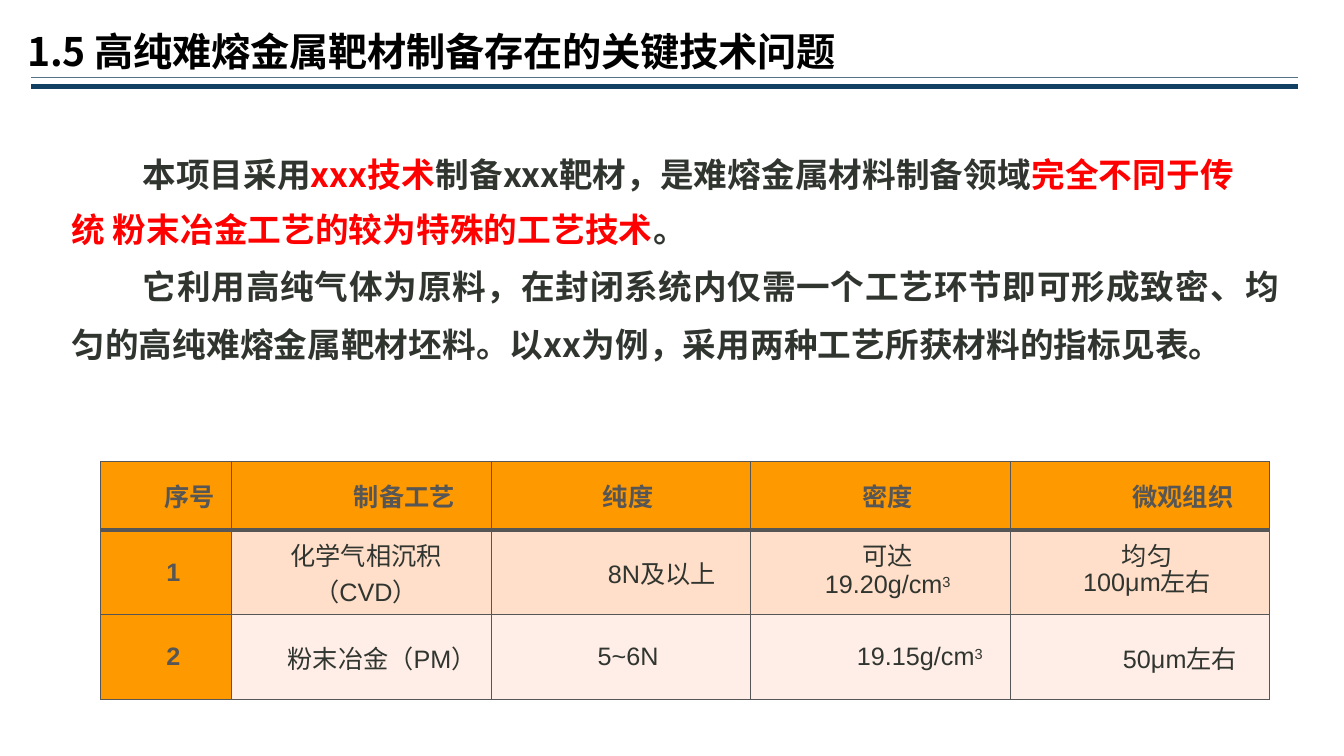
from lxml.etree import SubElement
from pptx import Presentation
from pptx.dml.color import RGBColor
from pptx.enum.shapes import MSO_CONNECTOR as Conn
from pptx.enum.text import MSO_ANCHOR as Anchor, MSO_AUTO_SIZE as Auto, PP_ALIGN as Align
from pptx.oxml.ns import qn
from pptx.util import Cm, Pt

HAN, LATIN = "Noto Sans CJK SC", "Arial"
INK, GREY, RED, ORANGE = "30352F", "565656", "FF0000", "FF9900"

TITLE = "1.5 高纯难熔金属靶材制备存在的关键技术问题"
RULES = [(1.96, "537285", 1), (2.18, "124062", 3)]  # y, colour, width

# line spacing, right margin, runs of (text, colour, letter spacing)
BODY = [
    (1.36, 0.8, [
        ("本项目采用", INK, 0), ("xxx", RED, -0.1), ("技术", RED, 0.6),
        ("制备", INK, 0), ("xxx", INK, -0.1), ("靶材，是", INK, 0),
        ("难熔金属材料制备领域", INK, 0.1),
        ("完全不同于传统 粉末冶金工艺的较为特殊的工艺技术", RED, 0.1),
        ("。", INK, 0)]),
    (1.43, 0, [
        ("它利用高纯气体为原料，在封闭系统内仅需一个工艺环节即可形成致", INK, 0.6),
        ("密", INK, 1.2), ("、", INK, 0.6), ("均 ", INK, 0),
        ("匀的高纯难熔金属靶材坯料。以", INK, 0.1), ("xx", INK, 0),
        ("为例，采用两种工艺所获材料的指标见表。", INK, 0.1)]),
]

# each cell: left indent, then lines of runs; ^ marks a superscript
TABLE = [
    [(1.17, ["序号"]), (2.16, ["制备工艺"]), (0.36, ["纯度"]),
     (0.36, ["密度"]), (2.16, ["微观组织"])],
    [(0.36, ["1"]), (0.23, ["化学气相沉积（", "CVD）"]), (2.05, ["8N", "及以上"]),
     (0.36, ["可达"], ["19.20g/cm", "^3"]), (0.36, ["均匀"], ["100μm", "左右"])],
    [(0.36, ["2"]), (1.04, ["粉末冶金（", "PM", "）"]), (0.36, ["5~6N"]),
     (1.98, ["19.15g/cm", "^3"]), (2.01, ["50μm", "左右"])],
]
WIDTHS = [3.3] + [6.54] * 4
HEIGHTS = [1.73, 2.13, 2.13]
FILLS = [ORANGE, "FFDECA", "FFEEE7"]


def rgb(code):
    return RGBColor.from_string(code)


def add_run(para, text, size, color, bold, face=HAN, space=0):
    run = para.add_run()
    run.text = text.lstrip("^")
    font = run.font
    font.size, font.bold, font.name = Pt(size), bold, face
    font.color.rgb = rgb(color)
    props = run._r.get_or_add_rPr()
    SubElement(props, qn("a:ea")).set("typeface", face)
    if space:
        props.set("spc", str(round(space * 100)))
    if text.startswith("^"):
        props.set("baseline", "25000")


def indent(para, left, first=0, right=0):
    props = para._p.get_or_add_pPr()
    for key, size in (("marL", left), ("marR", right), ("indent", first)):
        props.set(key, str(Cm(size)))


def bare(frame):
    """Strip the margins and let the text wrap in a fixed box."""
    frame.margin_left = frame.margin_right = 0
    frame.margin_top = frame.margin_bottom = 0
    frame.word_wrap, frame.auto_size = True, Auto.NONE
    return frame


def add_rule(slide, y, color, width):
    rule = slide.shapes.add_connector(
        Conn.STRAIGHT, Cm(0.79), Cm(y), Cm(32.72), Cm(y))
    rule.line.color.rgb, rule.line.width = rgb(color), Pt(width)
    SubElement(rule._element.spPr, qn("a:effectLst"))


def add_title(slide):
    title = slide.shapes.title
    title.left, title.top = Cm(0.64), Cm(0.69)
    title.width, title.height = Cm(30.5), Cm(1.19)
    frame = bare(title.text_frame)
    frame.vertical_anchor = Anchor.MIDDLE
    para = frame.paragraphs[0]
    para.alignment = Align.LEFT
    indent(para, 0.05)
    add_run(para, TITLE, 28, "000000", True, space=-0.1)


def add_body(slide):
    box = slide.shapes.add_textbox(Cm(1.42), Cm(3.51), Cm(31.04), Cm(5.56))
    frame = bare(box.text_frame)
    for i, (lead, right, runs) in enumerate(BODY):
        para = frame.add_paragraph() if i else frame.paragraphs[0]
        indent(para, 0.38, 1.8, right)
        para.line_spacing = lead
        for text, color, space in runs:
            add_run(para, text, 24, color, True, space=space)


def add_edges(cell, row):
    props = cell._tc.get_or_add_tcPr()
    top, low = (3 if row == 1 else 1), (3 if row == 0 else 1)
    for side, width in (("L", 1), ("R", 1), ("T", top), ("B", low)):
        line = SubElement(props, qn("a:ln" + side), w=str(Pt(width)))
        fill = SubElement(line, qn("a:solidFill"))
        SubElement(fill, qn("a:srgbClr"), val=GREY)


def fill_cell(cell, row, col, left, lines):
    head = row == 0 or col == 0
    add_edges(cell, row)
    cell.fill.solid()
    cell.fill.fore_color.rgb = rgb(ORANGE if head else FILLS[row])
    cell.margin_left = cell.margin_right = 0
    cell.margin_top = cell.margin_bottom = 0
    cell.vertical_anchor = Anchor.MIDDLE
    frame = cell.text_frame
    for i, runs in enumerate(lines):
        para = frame.add_paragraph() if i else frame.paragraphs[0]
        para.alignment = Align.CENTER
        indent(para, left)
        if len(lines) > 1:
            para.line_spacing = Pt(18.8)
        for text in runs:
            face = LATIN if text[0].isascii() else HAN
            add_run(para, text, 18, GREY if head else INK, head, face)


def add_grid(slide):
    grid = slide.shapes.add_table(
        len(HEIGHTS), len(WIDTHS), Cm(2.54), Cm(11.63),
        Cm(sum(WIDTHS)), Cm(sum(HEIGHTS))).table
    grid.first_row = grid.horz_banding = False
    for col, width in zip(grid.columns, WIDTHS):
        col.width = Cm(width)
    for row, height in zip(grid.rows, HEIGHTS):
        row.height = Cm(height)
    for r, cells in enumerate(TABLE):
        for c, (left, *lines) in enumerate(cells):
            fill_cell(grid.cell(r, c), r, c, left, lines)


def main():
    deck = Presentation()
    deck.slide_width, deck.slide_height = Cm(33.87), Cm(19.05)
    slide = deck.slides.add_slide(deck.slide_layouts[5])
    for rule in RULES:
        add_rule(slide, *rule)
    add_body(slide)
    add_title(slide)
    add_grid(slide)
    deck.save("out.pptx")


if __name__ == "__main__":
    main()
